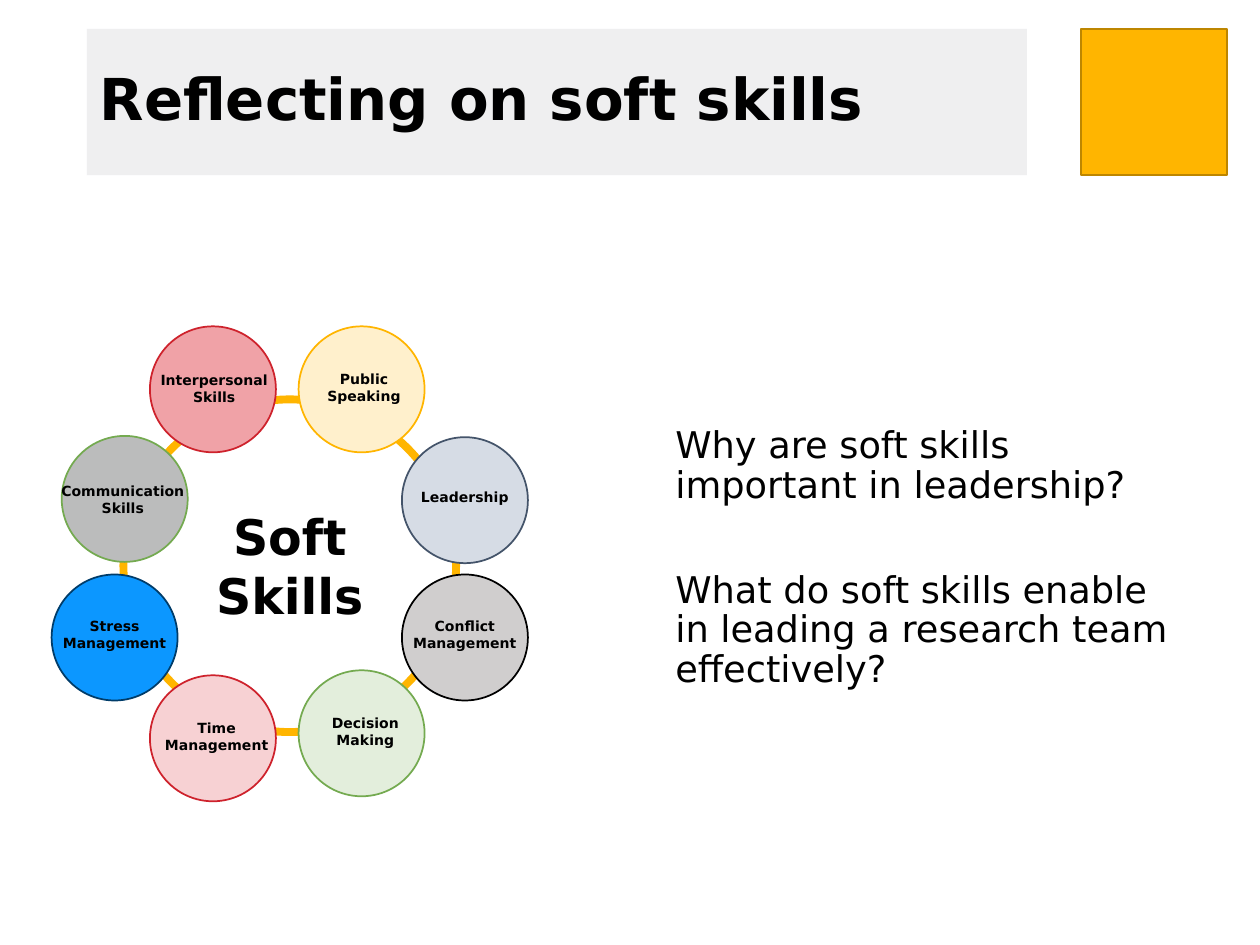
from pptx import Presentation, util as u
from pptx.dml.color import RGBColor
from pptx.enum import shapes, text
from pptx.oxml.xmlchemy import OxmlElement

Inches, Pt = u.Inches, u.Pt
FONT = "DejaVu Sans"
COLORS = {
    "black": "000000", "white": "FFFFFF", "panel": "EFEFF0",
    "gold": "FFB500", "dark_gold": "BD8600", "cream": "FFF0CC",
    "red": "CE222C", "rose": "F0A2A7", "pink": "F7D1D3",
    "green": "74AA50", "mint": "E3EEDC", "gray": "BBBCBC",
    "blue": "0C97FF", "navy": "003C69", "silver": "D0CECE",
    "slate": "44546A", "mist": "D6DCE5",
}
SKILLS = [
    ("Interpersonal Skills", 0.78, 0, "rose", "red", (-0.03, 0.31, 1.08, 0.37)),
    ("Public Speaking", 1.96, 0, "cream", "gold", (-0.01, 0.3, 1.06, 0.37)),
    ("Time Management", 0.78, 2.77, "pink", "red", (0, 0.3, 1.06, 0.37)),
    ("Decision Making", 1.96, 2.73, "mint", "green", (0, 0.3, 1.06, 0.37)),
    ("Stress Management", 0, 1.97, "blue", "navy", (-0.03, 0.29, 1.06, 0.37)),
    ("Communication Skills", 0.08, 0.87, "gray", "green", (-0.14, 0.32, 1.25, 0.37)),
    ("Conflict Management", 2.78, 1.97, "silver", "black", (-0.03, 0.29, 1.06, 0.37)),
    ("Leadership", 2.78, 0.88, "mist", "slate", (-0.03, 0.36, 1.06, 0.24)),
]
QUESTIONS = [
    "Why are soft skills important in leadership?",
    "What do soft skills enable in leading a research team effectively?",
]


def rgb(name):
    return RGBColor.from_string(COLORS[name])


def set_attrs(obj, values):
    for name, value in values.items():
        setattr(obj, name, value)


def place(sp, box):
    names = ("left", "top", "width", "height")
    set_attrs(sp, dict(zip(names, map(Inches, box))))


def write(p, words, size, bold=False, **layout):
    set_attrs(p, layout)
    r = p.add_run()
    r.text = words
    set_attrs(r.font, {"name": FONT, "size": Pt(size), "bold": bold})
    r.font.color.rgb = rgb("black")


def add_outlined(parent, kind, box, fill, line, weight=1):
    sp = parent.add_shape(kind, *map(Inches, box))
    sp.shadow.inherit = False
    sp.fill.solid()
    sp.fill.fore_color.rgb = rgb(fill)
    sp.line.color.rgb = rgb(line)
    sp.line.width = Pt(weight)
    return sp


def build_header(s, box):
    x, y, w, h = box
    title = s.shapes.title
    place(title, (x, y, w - 1.59, h))
    title.fill.solid()
    title.fill.fore_color.rgb = rgb("panel")
    tf = title.text_frame
    set_attrs(tf, {"auto_size": text.MSO_AUTO_SIZE.NONE,
                   "vertical_anchor": text.MSO_ANCHOR.MIDDLE})
    write(tf.paragraphs[0], "Reflecting on soft skills", 33, True,
          alignment=text.PP_ALIGN.LEFT, line_spacing=0.9)
    add_outlined(s.shapes, shapes.MSO_SHAPE.RECTANGLE,
                 (x + w - h, y, h, h), "gold", "dark_gold")


def build_questions(s, box):
    body = s.placeholders[1]
    place(body, box)
    tf = body.text_frame
    set_attrs(tf, {"auto_size": text.MSO_AUTO_SIZE.NONE,
                   "vertical_anchor": text.MSO_ANCHOR.TOP})
    for i, question in enumerate(QUESTIONS):
        p = tf.add_paragraph() if i else tf.paragraphs[0]
        pPr = p._p.get_or_add_pPr()
        pPr.set("marL", "0")
        pPr.set("indent", "0")
        pPr.append(OxmlElement("a:buNone"))
        write(p, question, 21, alignment=text.PP_ALIGN.LEFT,
              line_spacing=0.9, space_before=Pt(37 if i else 0))


def add_skill(parent, x, y, skill):
    name, dx, dy, fill, line, label = skill
    left, top = x + dx, y + dy
    add_outlined(parent, shapes.MSO_SHAPE.OVAL, (left, top, 1, 1), fill, line)
    lx, ly, w, h = label
    tb = parent.add_textbox(*map(Inches, (left + lx, top + ly, w, h)))
    tf = tb.text_frame
    set_attrs(tf, {"word_wrap": True,
                   "auto_size": text.MSO_AUTO_SIZE.SHAPE_TO_FIT_TEXT})
    write(tf.paragraphs[0], name, 8, True, alignment=text.PP_ALIGN.CENTER)


def build_skill_ring(s, box):
    x, y = box[:2]
    parent = s.shapes.add_group_shape().shapes
    ring = add_outlined(parent, shapes.MSO_SHAPE.OVAL,
                        (x + 0.57, y + 0.58, 2.64, 2.64), "white", "gold", 4.5)
    tf = ring.text_frame
    set_attrs(tf, {"word_wrap": True,
                   "vertical_anchor": text.MSO_ANCHOR.MIDDLE})
    write(tf.paragraphs[0], "Soft Skills", 28, True,
          alignment=text.PP_ALIGN.CENTER)
    for skill in SKILLS:
        add_skill(parent, x, y, skill)


def main():
    prs = Presentation()
    set_attrs(prs, {"slide_width": Inches(10), "slide_height": Inches(7.5)})
    s = prs.slides.add_slide(prs.slide_layouts[1])
    build_header(s, (0.69, 0.23, 9.05, 1.16))
    build_questions(s, (5.26, 3.34, 4.25, 2.42))
    build_skill_ring(s, (0.41, 2.59, 3.78, 3.77))
    prs.save("out.pptx")


if __name__ == "__main__":
    main()
